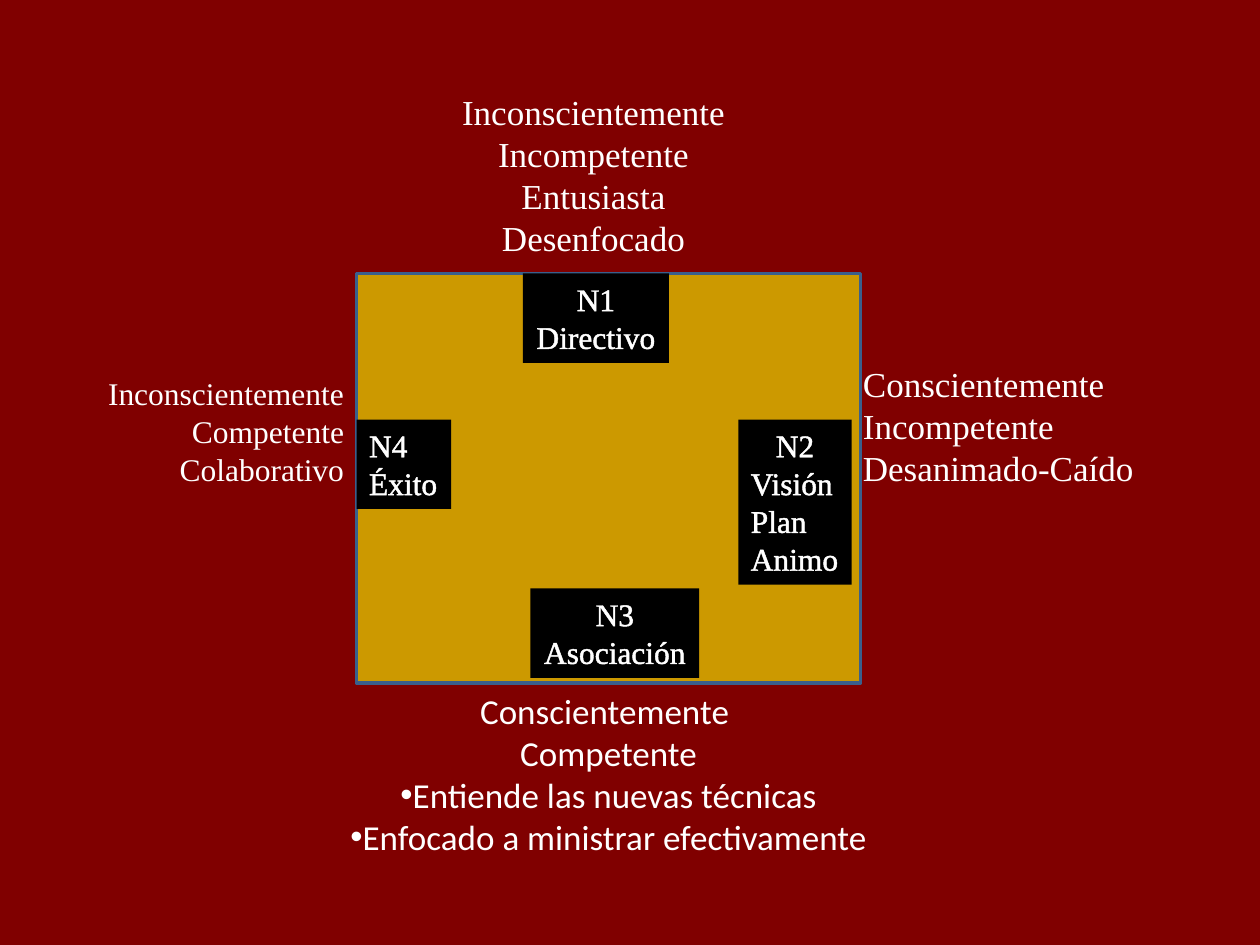
from dataclasses import dataclass
from lxml.etree import SubElement
from pptx import Presentation
from pptx.dml.color import RGBColor
from pptx.enum.shapes import MSO_SHAPE
from pptx.enum.text import MSO_ANCHOR, MSO_AUTO_SIZE, PP_ALIGN
from pptx.oxml.ns import qn
from pptx.util import Inches, Pt

LEFT, MID, RIGHT = PP_ALIGN.LEFT, PP_ALIGN.CENTER, PP_ALIGN.RIGHT


@dataclass(frozen=True)
class Theme:
    back: str = "800000"
    gold: str = "CC9900"
    edge: str = "3A5F8C"
    dark: str = "000000"
    ink: str = "FFFFFF"
    serif: str = "Times New Roman"
    sans: str = "Calibri"
    small: int = 18
    large: int = 20
    rim: float = 1.45


def color(code):
    return RGBColor.from_string(code)


def write(frame, lines, *, font, size, ink, align=LEFT, first=None, rim=None, dots=()):
    for i, line in enumerate(lines):
        para = frame.paragraphs[0] if i == 0 else frame.add_paragraph()
        para.alignment = first if i == 0 and first is not None else align
        run = para.add_run()
        run.text = line
        run.font.name = font
        run.font.size = Pt(size)
        run.font.color.rgb = color(ink)
        if rim:
            line_xml = run.font._element.makeelement(qn("a:ln"), {"w": str(Pt(rim))})
            fill = SubElement(line_xml, qn("a:solidFill"))
            SubElement(fill, qn("a:srgbClr"), val=ink)
            run.font._element.insert(0, line_xml)
        if i in dots:
            props = para._p.get_or_add_pPr()
            props.set("marL", "0")
            props.set("indent", "0")
            SubElement(props, qn("a:buFont"), typeface="Arial")
            SubElement(props, qn("a:buChar"), char="•")


class Board:
    def __init__(self, slide, theme):
        self.slide = slide
        self.theme = theme
        fill = slide.background.fill
        fill.solid()
        fill.fore_color.rgb = color(theme.back)

    def rect(self, area, fill, edge=None):
        shape = self.slide.shapes.add_shape(MSO_SHAPE.RECTANGLE, *map(Inches, area))
        shape.shadow.inherit = False
        shape.fill.solid()
        shape.fill.fore_color.rgb = color(fill)
        if edge:
            shape.line.color.rgb = color(edge)
            shape.line.width = Pt(2)
        else:
            shape.line.fill.background()
        return shape

    def label(self, area, lines, align=LEFT, first=None):
        look = self.theme
        frame = self.rect(area, look.dark).text_frame
        frame.word_wrap = False
        frame.auto_size = MSO_AUTO_SIZE.SHAPE_TO_FIT_TEXT
        frame.vertical_anchor = MSO_ANCHOR.TOP
        write(frame, lines, font=look.serif, size=look.small, ink=look.ink,
              align=align, first=first, rim=look.rim)

    def note(self, area, lines, align=LEFT, font=None, size=None, dots=()):
        look = self.theme
        frame = self.slide.shapes.add_textbox(*map(Inches, area)).text_frame
        frame.word_wrap = True
        write(frame, lines, font=font or look.serif, size=size or look.large,
              ink=look.ink, align=align, dots=dots)


def main():
    deck = Presentation()
    deck.slide_width, deck.slide_height = Inches(10), Inches(7.5)
    theme = Theme()
    board = Board(deck.slides.add_slide(deck.slide_layouts[6]), theme)

    board.rect((2.83, 2.17, 4, 3.25), theme.gold, theme.edge)
    board.label((4.15, 2.17, 1.16, 0.71), ["N1", "Directivo"], MID)
    board.label((5.86, 3.33, 0.9, 1.31), ["N2", "Visión", "Plan", "Animo"], first=MID)
    board.label((4.21, 4.67, 1.34, 0.71), ["N3", "Asociación"], MID)
    board.label((2.83, 3.33, 0.75, 0.71), ["N4", "Éxito"])

    board.note((0.33, 2.92, 2.5, 1.92),
               ["Inconscientemente Competente", "Colaborativo"], RIGHT, size=theme.small)
    board.note((6.75, 2.83, 2.92, 1.92),
               ["Conscientemente", "Incompetente", "Desanimado-Caído"])
    board.note((2.33, 5.42, 5, 1.58),
               ["Conscientemente ", "Competente", "Entiende las nuevas técnicas",
                "Enfocado a ministrar efectivamente"], MID, font=theme.sans, dots=(2, 3))
    board.note((3.5, 0.67, 2.42, 1.75),
               ["Inconscientemente", "Incompetente", "Entusiasta", "Desenfocado"], MID)
    deck.save("out.pptx")


if __name__ == "__main__":
    main()
